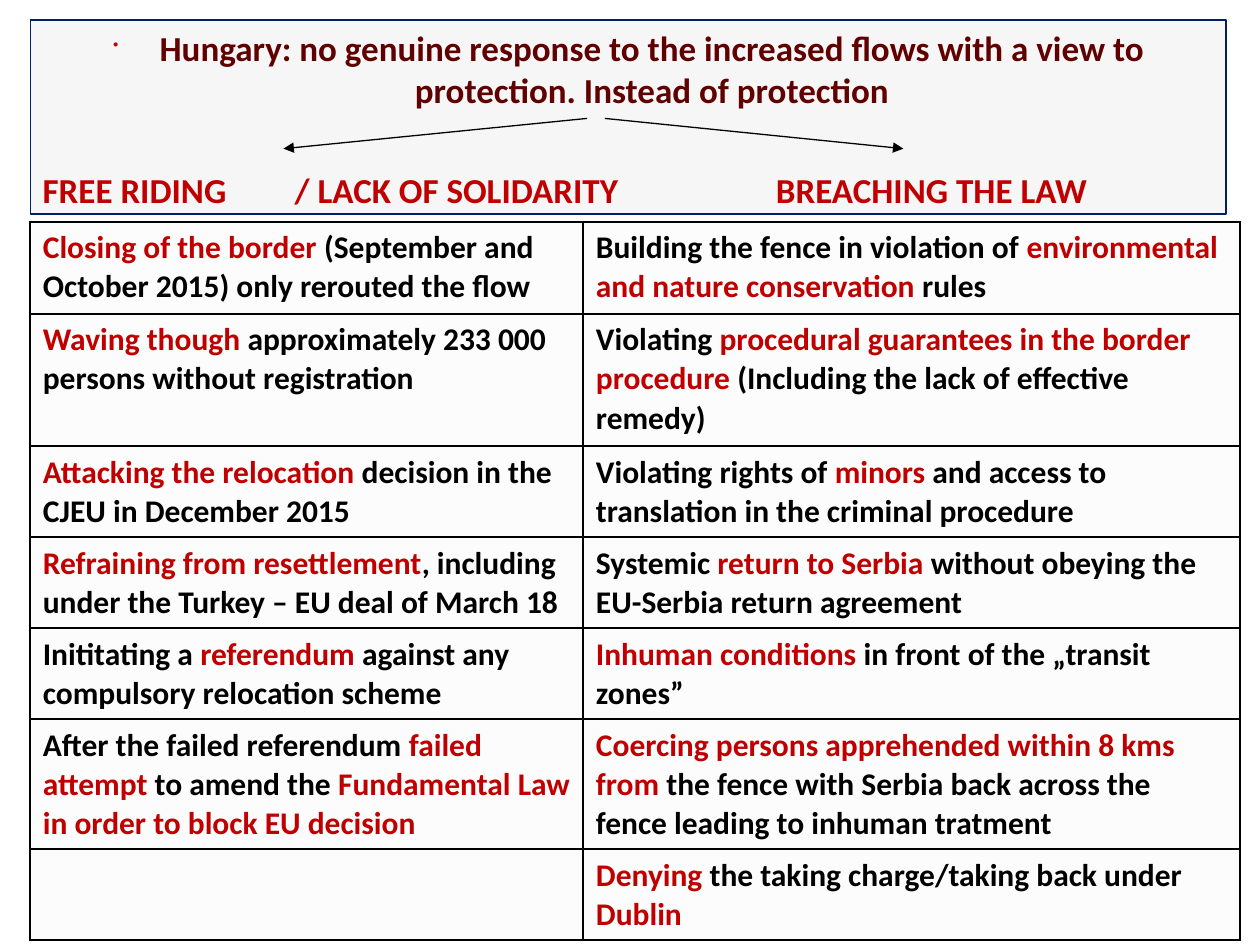
"""Build the slide on free riding and breaching the law."""
from lxml import etree
from pptx import Presentation, util as u
from pptx.dml.color import RGBColor
from pptx.enum import shapes, text
from pptx.oxml import ns

TITLE = ("Hungary: no genuine response to the increased flows with a view to "
         "protection. Instead of protection")
HEADS = "FREE RIDING\t/ LACK OF SOLIDARITY\tBREACHING THE LAW"
TABS = [2, 5.82]
ROWS = [
    (0.73, "*Closing of the border *(September and October 2015) only rerouted the flow",
     "Building the fence in violation of *environmental and nature conservation *rules"),
    (1.05, "*Waving though *approximately 233 000 persons without registration",
     "Violating *procedural guarantees in the border procedure *"
     "(Including the lack of effective remedy)"),
    (0.72, "*Attacking the relocation* decision in the CJEU in December 2015",
     "Violating rights of *minors *and access to translation in the criminal procedure"),
    (0.72, "*Refraining from resettlement*, including under the Turkey – EU deal of March 18",
     "Systemic *return to Serbia *without obeying the EU-Serbia return agreement"),
    (0.72, "Inititating a *referendum *against any compulsory relocation scheme",
     "*Inhuman conditions *in front of the „transit zones”"),
    (1.03, "After the failed referendum *failed attempt *to amend the "
     "*Fundamental Law in order to block EU decision*",
     "*Coercing persons apprehended within 8 kms from *"
     "the fence with Serbia back across the fence leading to inhuman tratment"),
    (0.72, "", "*Denying *the taking charge/taking back under *Dublin*"),
]
COLS = [4.39, 5.21]
ARROWS = [(4.66, 0.94, 2.25, 1.18), (4.8, 0.94, 7.17, 1.18)]
RED, BLACK, MAROON, NAVY = "C00000", "000000", "600000", "002060"
FONT = {"name": "Calibri", "bold": True}
BASE = {"line_spacing": 1.02, "alignment": text.PP_ALIGN.LEFT}
TOP = {"space_before": u.Pt(4.9), "alignment": text.PP_ALIGN.CENTER}
LOW = {"space_before": u.Pt(33), "alignment": text.PP_ALIGN.LEFT}


def rgb(code):
    """Turn a hex string into a colour."""
    return RGBColor.from_string(code)


def put(obj, vals):
    """Set each attribute in a dict."""
    for key, val in vals.items():
        setattr(obj, key, val)


def add(node, tag, **vals):
    """Append a DrawingML child with attributes."""
    kid = etree.SubElement(node, ns.qn("a:" + tag))
    for key, val in vals.items():
        kid.set(key, str(val))
    return kid


def paint(fill, node, code, alpha):
    """Give a solid fill with an opacity in percent."""
    fill.solid()
    fill.fore_color.rgb = rgb(code)
    tone = node.find(ns.qn("a:solidFill"))[0]
    add(tone, "alpha", val=alpha * 1000)


def write(para, words, size, code):
    """Add one run of text."""
    run = para.add_run()
    run.text = words
    put(run.font, dict(FONT, size=u.Pt(size)))
    run.font.color.rgb = rgb(code)


def head(slide):
    """Draw the heading box."""
    box = slide.shapes.add_shape(shapes.MSO_SHAPE.RECTANGLE,
                                 *map(u.Inches, (0.24, 0.16, 9.49, 1.54)))
    box.shadow.inherit = False
    paint(box.fill, box._element.spPr, "E6E6E6", 32)
    box.line.color.rgb = rgb(NAVY)
    box.line.width = u.Pt(0.75)
    frame = box.text_frame
    put(frame, {"word_wrap": True, "vertical_anchor": text.MSO_ANCHOR.TOP})
    top, low = frame.paragraphs[0], frame.add_paragraph()
    put(top, TOP)
    put(low, LOW)
    write(top, TITLE, 20, MAROON)
    write(low, HEADS, 20, RED)
    prop = top._p.get_or_add_pPr()
    prop.set("marL", str(u.Inches(0.38)))
    prop.set("indent", str(u.Inches(-0.37)))
    add(add(prop, "buClr"), "srgbClr", val=RED)
    add(prop, "buSzPct", val=45000)
    add(prop, "buChar", char="•")
    stops = add(low._p.get_or_add_pPr(), "tabLst")
    for pos in TABS:
        add(stops, "tab", pos=u.Inches(pos), algn="l")


def fill_cell(cell, words):
    """Write a cell whose starred parts are red, and frame it."""
    para = cell.text_frame.paragraphs[0]
    put(para, BASE)
    para.font.size = u.Pt(18)
    for num, part in enumerate(words.split("*")):
        if part:
            write(para, part, 18, RED if num % 2 else BLACK)
    prop = cell._tc.get_or_add_tcPr()
    paint(cell.fill, prop, "F2F2F2", 20)
    for num, side in enumerate("LRTB"):
        line = add(prop, "ln" + side, w=u.Pt(1.13))
        add(add(line, "solidFill"), "srgbClr", val=BLACK)
        prop.insert(num, line)


def grid(slide):
    """Draw the table."""
    high = sum(row[0] for row in ROWS)
    table = slide.shapes.add_table(len(ROWS), len(COLS), *map(
        u.Inches, (0.24, 1.76, sum(COLS), high))).table
    put(table, {"first_row": False, "horz_banding": False})
    for col, wide in zip(table.columns, COLS):
        col.width = u.Inches(wide)
    for row, (tall, *cells) in zip(table.rows, ROWS):
        row.height = u.Inches(tall)
        for cell, words in zip(row.cells, cells):
            fill_cell(cell, words)


def arrow(slide, ends):
    """Draw a line with an arrowhead."""
    line = slide.shapes.add_connector(shapes.MSO_CONNECTOR.STRAIGHT, *map(u.Inches, ends))
    line.line.color.rgb = rgb(BLACK)
    line.line.width = u.Pt(0.75)
    add(line.line._get_or_add_ln(), "tailEnd", type="triangle")
    add(line._element.spPr, "effectLst")


def main():
    """Build and save the slide."""
    deck = Presentation()
    put(deck, {"slide_width": u.Inches(10), "slide_height": u.Inches(7.5)})
    slide = deck.slides.add_slide(deck.slide_layouts[6])
    head(slide)
    grid(slide)
    for ends in ARROWS:
        arrow(slide, ends)
    deck.save("out.pptx")


if __name__ == "__main__":
    main()
